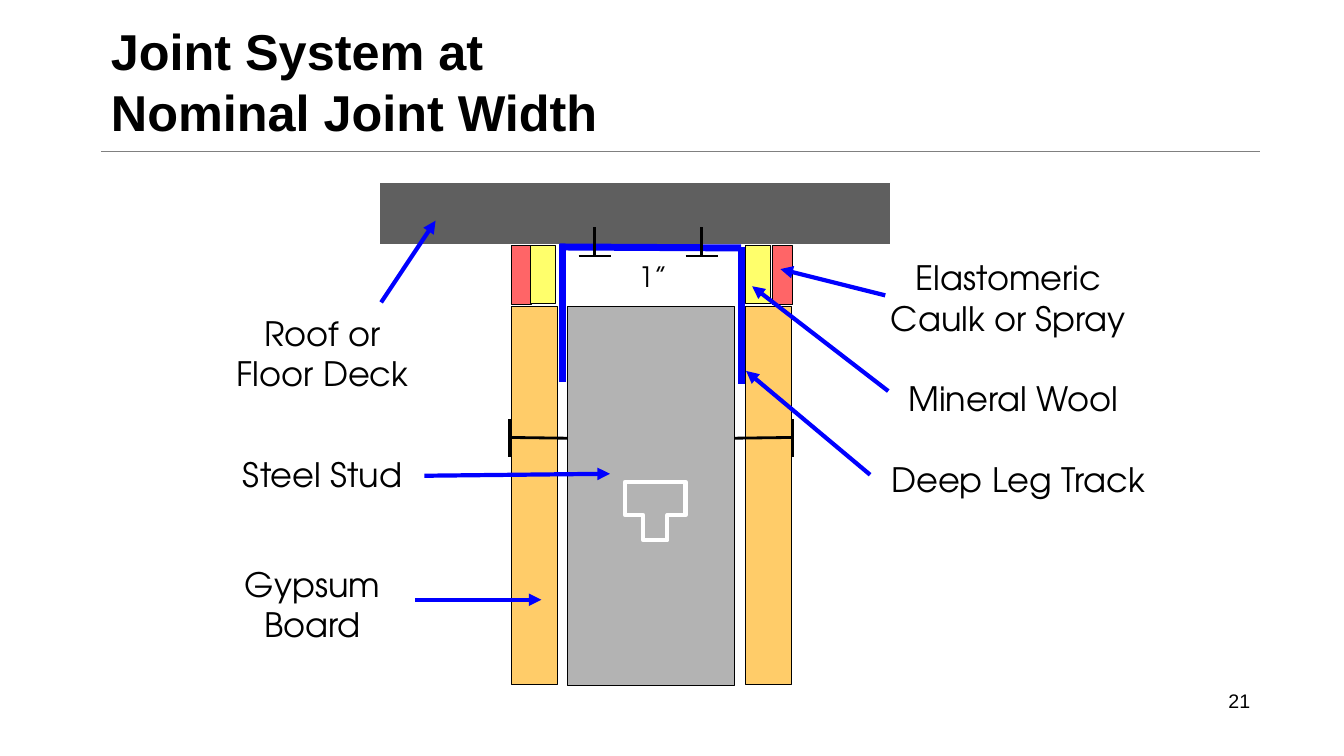
from lxml import etree
from pptx import Presentation
from pptx.dml.color import RGBColor
from pptx.enum.shapes import MSO_CONNECTOR, MSO_SHAPE
from pptx.enum.text import MSO_ANCHOR, MSO_AUTO_SIZE, PP_ALIGN
from pptx.oxml.ns import qn
from pptx.util import Inches, Pt

BLACK, WHITE, BLUE, TRACK_BLUE = "000000", "FFFFFF", "0000FF", "0000FB"
DECK, BOARD, STUD = "5F5F5F", "FFCC69", "B3B3B3"
CAULK, WOOL = "FF6567", "FFFF6B"
LABEL_FONT = "TeX Gyre Adventor"


def rgb(color):
    return RGBColor.from_string(color)


def add_rect(s, x, y, w, h, fill, line=BLACK, weight=0.75):
    sp = s.shapes.add_shape(MSO_SHAPE.RECTANGLE, Inches(x), Inches(y), Inches(w), Inches(h))
    sp.shadow.inherit = False
    sp.fill.solid()
    sp.fill.fore_color.rgb = rgb(fill)
    sp.line.color.rgb = rgb(line)
    sp.line.width = Pt(weight)


def add_line(s, x1, y1, x2, y2, color=BLACK, weight=2, arrow=False):
    c = s.shapes.add_connector(MSO_CONNECTOR.STRAIGHT, Inches(x1), Inches(y1), Inches(x2), Inches(y2))
    c.line.color.rgb = rgb(color)
    c.line.width = Pt(weight)
    if arrow:
        etree.SubElement(c.line._get_or_add_ln(), qn("a:tailEnd"), type="triangle")
    etree.SubElement(c._element.spPr, qn("a:effectLst"))


def add_outline(s, points, color, weight):
    """Draw a closed, unfilled outline through points given in inches."""
    start, *rest = [(Inches(x), Inches(y)) for x, y in points]
    builder = s.shapes.build_freeform(*start)
    builder.add_line_segments(rest, close=True)
    sp = builder.convert_to_shape()
    sp.shadow.inherit = False
    sp.fill.background()
    sp.line.color.rgb = rgb(color)
    sp.line.width = Pt(weight)


def write(sp, text, size=24, font=LABEL_FONT, bold=False, align=PP_ALIGN.CENTER,
          anchor=MSO_ANCHOR.MIDDLE, wrap=True, inset=True, before=0):
    """Fill a shape with one paragraph; a new line in text is a line break."""
    tf = sp.text_frame
    tf.word_wrap = wrap
    tf.auto_size = MSO_AUTO_SIZE.NONE
    tf.vertical_anchor = anchor
    if not inset:
        tf.margin_left = tf.margin_right = tf.margin_top = tf.margin_bottom = 0
    p = tf.paragraphs[0]
    p.alignment = align
    p.space_before = Pt(before)
    for i, part in enumerate(text.splitlines()):
        if i:
            p.add_line_break()
        r = p.add_run()
        r.text = part
        r.font.size = Pt(size)
        r.font.name = font
        r.font.bold = bold
        r.font.color.rgb = rgb(BLACK)


def add_label(s, text, x, y, w, h, **style):
    write(s.shapes.add_textbox(Inches(x), Inches(y), Inches(w), Inches(h)), text, **style)


def add_title(s, text):
    title = s.shapes.title
    title.left, title.top, title.width, title.height = Inches(1), Inches(0.2), Inches(11.5), Inches(1.2)
    write(title, text, size=36, font="Arial", bold=True, align=PP_ALIGN.LEFT, before=6)
    add_line(s, 1, 1.5, 12.5, 1.5, "808080", 1)


def draw_wall(s):
    for x in (5.07, 7.39):
        add_rect(s, x, 3.04, 0.46, 3.75, BOARD)
    for head, tip in ((5.05, 5.8), (7.86, 7.1)):
        add_line(s, head, 4.16, head, 4.53)
        add_line(s, head, 4.34, tip, 4.35)
    add_rect(s, 5.63, 3.04, 1.66, 3.76, STUD)
    add_outline(s, [(6.2, 4.78), (6.8, 4.78), (6.8, 5.11), (6.62, 5.11),
                    (6.62, 5.36), (6.38, 5.36), (6.38, 5.11), (6.2, 5.11)], WHITE, 3)


def draw_joint(s):
    add_rect(s, 3.76, 1.81, 5.07, 0.62, DECK, WHITE, 1)
    for x in (5.07, 7.66):
        add_rect(s, x, 2.44, 0.2, 0.58, CAULK)
    for x in (5.26, 7.39):
        add_rect(s, x, 2.44, 0.25, 0.57, WOOL)
    add_line(s, 7.35, 2.45, 7.35, 3.81, TRACK_BLUE, 5)
    add_line(s, 5.58, 2.42, 5.58, 3.79, TRACK_BLUE, 5)
    add_line(s, 5.55, 2.45, 7.35, 2.46, TRACK_BLUE, 5)
    for x in (5.9, 6.96):
        add_line(s, x - 0.16, 2.54, x + 0.16, 2.54)
        add_line(s, x, 2.54, x, 2.25)


def draw_labels(s):
    bottom = MSO_ANCHOR.BOTTOM
    add_label(s, "Roof or Floor Deck", 2.2, 3, 2, 1)
    add_label(s, "Steel Stud", 2.3, 4.5, 1.8, 0.4, inset=False)
    add_label(s, "Gypsum Board", 2.3, 5.49, 1.6, 1)
    add_label(s, "Elastomeric Caulk or Spray", 8.7, 2.4, 2.6, 1, anchor=bottom)
    add_label(s, "Mineral Wool", 8.8, 3.7, 2.5, 0.5)
    add_label(s, "Deep Leg Track", 8.7, 4.5, 2.8, 0.5, anchor=bottom, wrap=False)
    add_label(s, "1”", 6.33, 2.57, 0.29, 0.34, size=20, anchor=bottom, wrap=False, inset=False)
    for ends in (
        (3.78, 3, 4.32, 2.19),
        (4.21, 4.72, 6.05, 4.7),
        (4.12, 5.95, 5.37, 5.95),
        (8.78, 2.93, 7.74, 2.67),
        (8.81, 3.88, 7.46, 2.84),
        (8.63, 4.71, 7.4, 3.68),
    ):
        add_line(s, *ends, BLUE, 3, arrow=True)


def main():
    prs = Presentation()
    prs.slide_width, prs.slide_height = Inches(13.33), Inches(7.5)
    s = prs.slides.add_slide(prs.slide_layouts[5])
    add_title(s, "Joint System at\nNominal Joint Width")
    draw_wall(s)
    draw_joint(s)
    draw_labels(s)
    add_label(s, "21", 11.5, 6.8, 1, 0.3, size=14, font="Arial", align=PP_ALIGN.RIGHT)
    prs.save("out.pptx")


if __name__ == "__main__":
    main()
